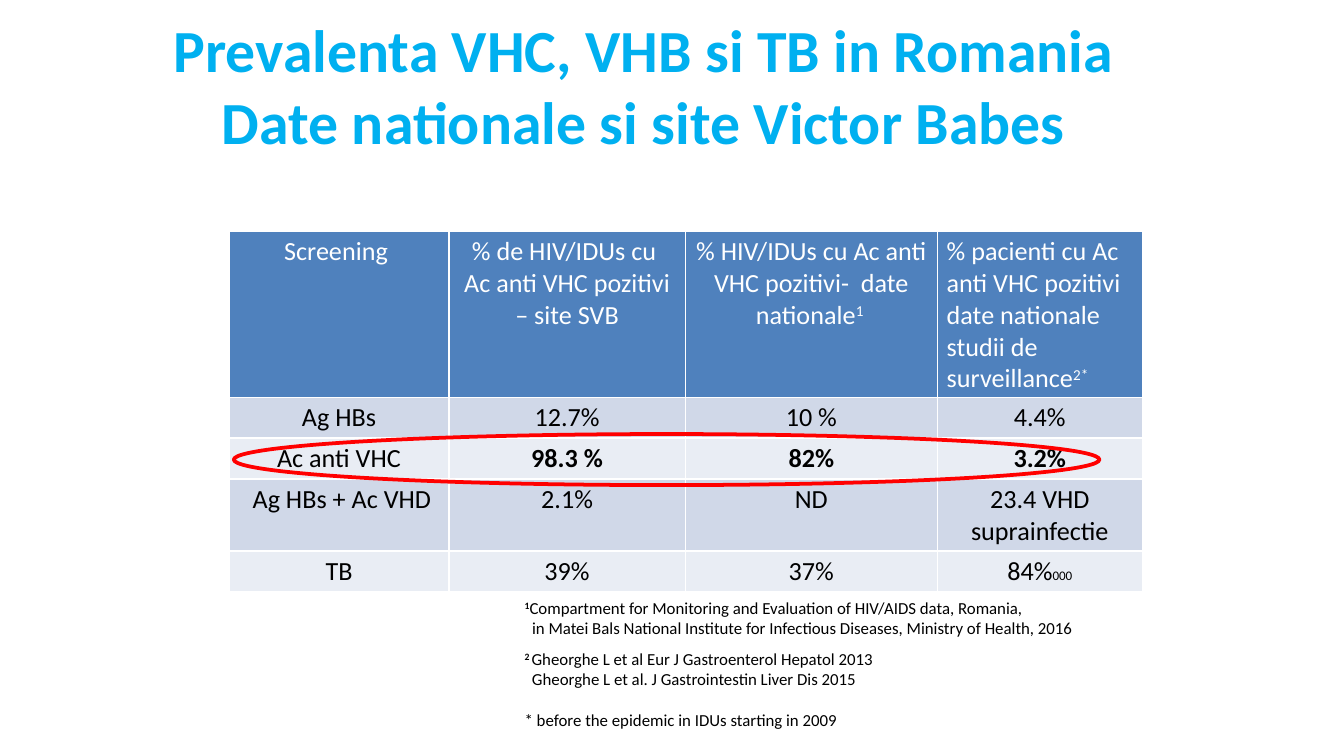
import pptx
import pptx.dml.color
import pptx.enum.shapes
import pptx.enum.text
import pptx.oxml
import pptx.oxml.ns
import pptx.util

SCALE = 4572  # EMU in one px, 200 px to the inch
FONT = "Calibri"
HUES = {"title": "00B0F0", "ink": "000000", "paper": "FFFFFF",
        "head": "4F81BD", "odd": "D0D8E8", "even": "E9EDF4", "ring": "FF0000"}
ALIGN = pptx.enum.text.PP_ALIGN
FIT = pptx.enum.text.MSO_AUTO_SIZE


def px(*vals):
    return [pptx.util.Emu(v * SCALE) for v in vals]


def hue(name):
    return pptx.dml.color.RGBColor.from_string(HUES[name])


def write(para, text, size=14, color="ink", bold=False, align=ALIGN.LEFT,
          before=0, indent=0):
    """Fill a paragraph; text is a string or a list of (string, style),
    where style is None, "sup" or a point size."""
    para.alignment = align
    if before:
        para.space_before = pptx.util.Pt(before)
    if indent:
        props = para._p.get_or_add_pPr()
        props.set("marL", str(indent * SCALE))
        props.set("indent", "0")
    for words, style in [(text, None)] if isinstance(text, str) else text:
        for num, line in enumerate(words.split("\n")):
            if num:
                para.add_line_break()
            run = para.add_run()
            run.text = line
            font = run.font
            font.name = FONT
            font.size = pptx.util.Pt(style if isinstance(style, int) else size)
            font.bold = bold or (style == "sup" and size == 9)
            font.color.rgb = hue(color)
            if style == "sup":
                font._element.set("baseline", "30000")


def fill_frame(frame, paras, **fmt):
    """Write paragraphs; each is a text or a (text, extra format) pair."""
    for num, item in enumerate(paras):
        text, more = item if isinstance(item, tuple) else (item, {})
        para = frame.add_paragraph() if num else frame.paragraphs[0]
        write(para, text, **{**fmt, **more})


def edge(cell):
    """Draw thin white borders round a cell."""
    props = cell._tc.get_or_add_tcPr()
    for side in "LRTB":
        props.append(pptx.oxml.parse_xml(
            f'<a:ln{side} {pptx.oxml.ns.nsdecls("a")} w="12700">'
            f'<a:solidFill><a:srgbClr val="{HUES["paper"]}"/></a:solidFill>'
            f'</a:ln{side}>'))


class Page:
    def __init__(self, deck):
        self.slide = deck.slides.add_slide(deck.slide_layouts[5])
        self.shapes = self.slide.shapes

    def title(self, text, box):
        head = self.shapes.title
        head.left, head.top, head.width, head.height = px(*box)
        frame = head.text_frame
        frame.auto_size = FIT.NONE
        frame.vertical_anchor = pptx.enum.text.MSO_ANCHOR.MIDDLE
        write(frame.paragraphs[0], text, size=32, color="title", bold=True,
              align=ALIGN.CENTER)

    def note(self, paras, box):
        frame = self.shapes.add_textbox(*px(*box)).text_frame
        frame.word_wrap = True
        frame.auto_size = FIT.SHAPE_TO_FIT_TEXT
        fill_frame(frame, paras, size=9)

    def table(self, rows, left, top, wides, highs, strong):
        """Add a banded table; strong is the row with bold values."""
        grid = self.shapes.add_table(
            len(rows), len(wides), *px(left, top, sum(wides), sum(highs))).table
        for col, wide in zip(grid.columns, px(*wides)):
            col.width = wide
        for row, high in zip(grid.rows, px(*highs)):
            row.height = high
        for r, row in enumerate(rows):
            for c, item in enumerate(row):
                cell = grid.cell(r, c)
                cell.margin_left, cell.margin_right = px(14, 14)
                cell.margin_top, cell.margin_bottom = px(7, 7)
                edge(cell)
                cell.fill.solid()
                band = "odd" if r % 2 else "even"
                cell.fill.fore_color.rgb = hue(band if r else "head")
                last = r == 0 and c == len(wides) - 1
                fill_frame(cell.text_frame,
                           item if isinstance(item, tuple) else [item],
                           color="ink" if r else "paper",
                           bold=r == strong and c > 0,
                           align=ALIGN.LEFT if last else ALIGN.CENTER)

    def ring(self, box):
        oval = self.shapes.add_shape(
            pptx.enum.shapes.MSO_SHAPE.OVAL, *px(*box))
        oval.shadow.inherit = False
        oval.fill.background()
        oval.line.color.rgb = hue("ring")
        oval.line.width = pptx.util.Pt(2)


ROWS = [
    ["Screening ",
     ("% de HIV/IDUs cu ", "Ac anti VHC pozitivi – site SVB"),
     [("% HIV/IDUs cu Ac anti VHC pozitivi-  date nationale", None),
      ("1 ", "sup")],
     [("% pacienti cu Ac anti VHC pozitivi date nationale studii de "
       "surveillance", None), ("2*", "sup")]],
    ["Ag HBs", "12.7%", "10 %", "4.4%"],
    ["Ac anti VHC", "98.3 %", "82%", "3.2%"],
    [" Ag HBs + Ac VHD", "2.1%", "ND", "23.4 VHD suprainfectie"],
    ["TB", "39%", "37%", [("84%", None), ("000", 7)]],
]
SOURCE = [
    [("1", "sup"), ("Compartment for Monitoring and Evaluation of HIV/AIDS "
                    "data, Romania,", None)],
    ("in Matei Bals National Institute for Infectious Diseases, "
     "Ministry of Health, 2016", {"indent": 11}),
]
PAPERS = [
    [("2 ", "sup"),
     ("Gheorghe L et al Eur J Gastroenterol Hepatol 2013", None)],
    ("Gheorghe L et al. J Gastrointestin Liver Dis 2015", {"indent": 11}),
    ("* before the epidemic in IDUs starting in 2009", {"before": 11}),
]


def main():
    deck = pptx.Presentation()
    deck.slide_width, deck.slide_height = px(2000, 1125)
    page = Page(deck)
    page.title("Prevalenta VHC, VHB si TB in Romania\n"
               "Date nationale si site Victor Babes", (50, 44, 1816, 164))
    page.note(SOURCE, (761, 880, 918, 112))
    page.table(ROWS, 341, 344, [327, 352, 375, 305],
               [240, 60, 60, 106, 60], strong=2)
    page.note(PAPERS, (761, 956, 988, 172))
    page.ring((348, 646, 1288, 76))
    deck.save("out.pptx")


if __name__ == "__main__":
    main()
